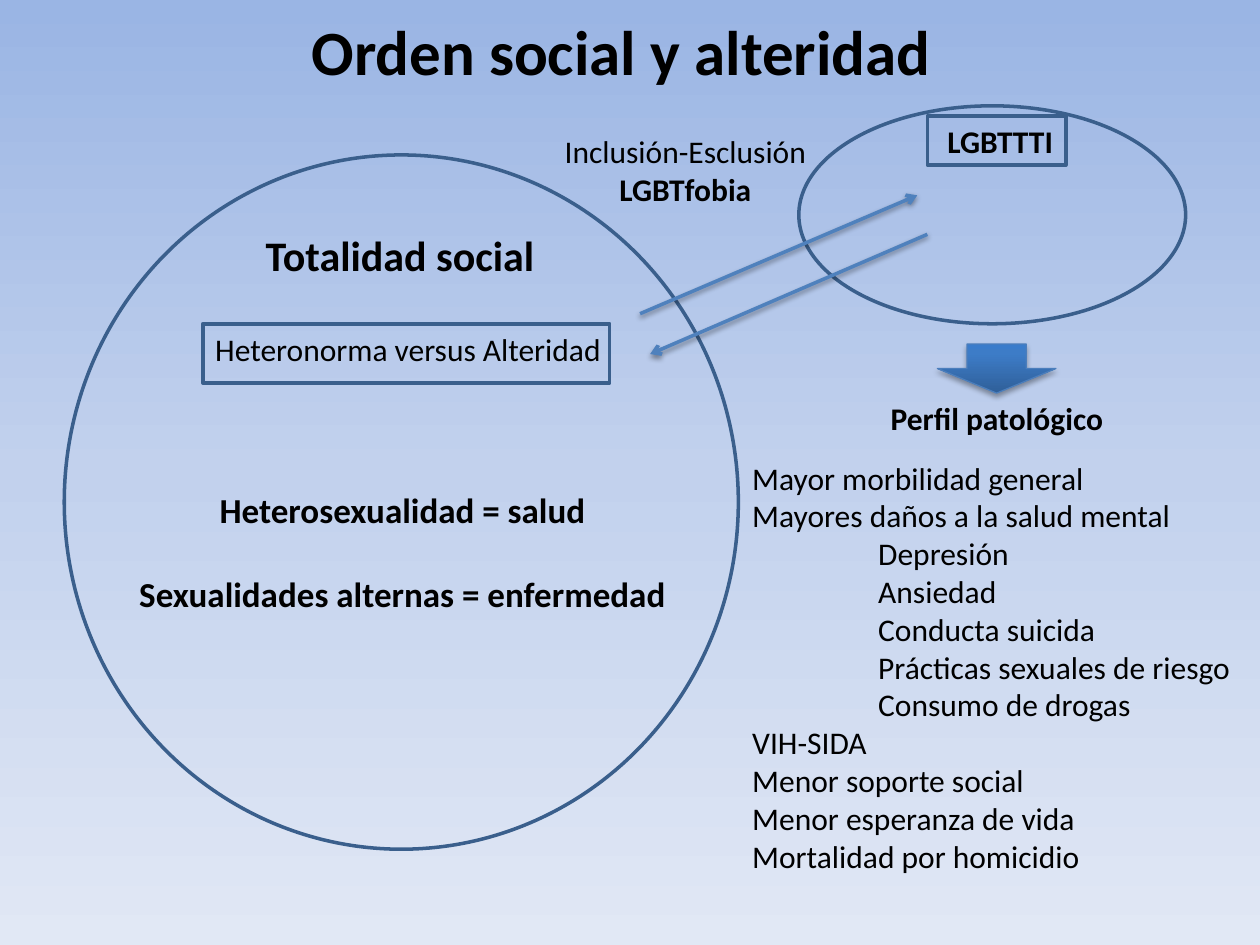
from lxml.etree import SubElement
from pptx import Presentation
from pptx.dml.color import RGBColor
from pptx.enum.shapes import MSO_CONNECTOR, MSO_SHAPE
from pptx.enum.text import MSO_ANCHOR, MSO_AUTO_SIZE, PP_ALIGN
from pptx.oxml.ns import qn
from pptx.util import Inches, Pt

COLUMNS, ROWS = 100, 75
WIDTH, HEIGHT = Inches(10), Inches(7.5)
FONT = "Calibri"
COLORS = {
    "text": "000000",
    "outline": "3A5F8C",
    "arrow": "4F81BD",
    "block_line": "4B7EBC",
    "shadow": "000000",
}
BACKGROUND_STOPS = [(0, "9AB5E4"), (50, "C2D1ED"), (100, "E1E8F5")]
BLOCK_STOPS = [(0, "2F5F99"), (80, "3D7CC7"), (100, "3A7CCB")]
PROFILE = [
    ("Mayor morbilidad general", 0),
    ("Mayores daños a la salud mental", 0),
    ("Depresión", 1),
    ("Ansiedad", 1),
    ("Conducta suicida", 1),
    ("Prácticas sexuales de riesgo", 1),
    ("Consumo de drogas", 1),
    ("VIH-SIDA", 0),
    ("Menor soporte social", 0),
    ("Menor esperanza de vida", 0),
    ("Mortalidad por homicidio", 0),
]


def across(columns):
    return round(WIDTH * columns / COLUMNS)


def down(rows):
    return round(HEIGHT * rows / ROWS)


def cells(left, top, width, height):
    return across(left), down(top), across(width), down(height)


def color(name):
    return RGBColor.from_string(COLORS[name])


def set_gradient(fill, element, stops, angle):
    fill.gradient()
    fill.gradient_angle = angle
    stop_list = element.find(".//" + qn("a:gsLst"))
    for stop in list(stop_list):
        stop_list.remove(stop)
    for position, value in stops:
        stop = SubElement(stop_list, qn("a:gs"), pos=str(position * 1000))
        SubElement(stop, qn("a:srgbClr"), val=value)


def add_shadow(shape, distance, opacity):
    properties = shape._element.spPr
    effects = properties.find(qn("a:effectLst"))
    if effects is None:
        effects = SubElement(properties, qn("a:effectLst"))
    shadow = SubElement(effects, qn("a:outerShdw"), blurRad=str(Pt(3.1)),
                        dist=str(Pt(distance)), dir="5400000", rotWithShape="0")
    shade = SubElement(shadow, qn("a:srgbClr"), val=COLORS["shadow"])
    SubElement(shade, qn("a:alpha"), val=str(opacity * 1000))


def format_paragraph(paragraph, text, size, bold, align):
    paragraph.text = text
    paragraph.alignment = align
    paragraph.font.name = FONT
    paragraph.font.size = Pt(size)
    paragraph.font.bold = bold
    paragraph.font.color.rgb = color("text")


def place(shape, box):
    shape.left, shape.top, shape.width, shape.height = cells(*box)
    frame = shape.text_frame
    frame.auto_size = MSO_AUTO_SIZE.NONE
    frame.vertical_anchor = MSO_ANCHOR.TOP
    frame.word_wrap = True
    return frame


def fill_title(slide, text, box):
    frame = place(slide.shapes.title, box)
    format_paragraph(frame.paragraphs[0], text, 36, True, PP_ALIGN.CENTER)


def fill_list(slide, items, box):
    frame = place(slide.placeholders[1], box)
    for index, (text, level) in enumerate(items):
        paragraph = frame.paragraphs[0] if index == 0 else frame.add_paragraph()
        format_paragraph(paragraph, text, 18, False, PP_ALIGN.LEFT)
        paragraph.level = level
        paragraph.space_before = Pt(0)
        properties = paragraph._p.get_or_add_pPr()
        properties.set("marL", str(across(10 * level)))
        properties.set("indent", "0")
        SubElement(properties, qn("a:buNone")) if properties.find(qn("a:defRPr")) is None \
            else properties.find(qn("a:defRPr")).addprevious(
                SubElement(properties, qn("a:buNone")))


def add_label(slide, lines, box, size=18, align=PP_ALIGN.LEFT, gap=0):
    frame = slide.shapes.add_textbox(*cells(*box)).text_frame
    frame.word_wrap = False
    for index, (text, bold) in enumerate(lines):
        paragraph = frame.paragraphs[0] if index == 0 else frame.add_paragraph()
        format_paragraph(paragraph, text, size, bold, align)
        if index:
            paragraph.space_before = Pt(gap)


def add_outline(slide, kind, box):
    shape = slide.shapes.add_shape(kind, *cells(*box))
    shape.shadow.inherit = False
    shape.fill.background()
    shape.line.color.rgb = color("outline")
    shape.line.width = Pt(2)


def add_arrow(slide, start, end):
    connector = slide.shapes.add_connector(
        MSO_CONNECTOR.STRAIGHT, across(start[0]), down(start[1]),
        across(end[0]), down(end[1]))
    connector.line.color.rgb = color("arrow")
    connector.line.width = Pt(2)
    SubElement(connector.line._get_or_add_ln(), qn("a:tailEnd"), type="arrow")
    add_shadow(connector, 1.6, 38)


def add_block_arrow(slide, box):
    shape = slide.shapes.add_shape(MSO_SHAPE.DOWN_ARROW, *cells(*box))
    shape.shadow.inherit = False
    set_gradient(shape.fill, shape._element, BLOCK_STOPS, 90)
    shape.line.color.rgb = color("block_line")
    shape.line.width = Pt(0.75)
    add_shadow(shape, 1.8, 35)


def main():
    presentation = Presentation()
    presentation.slide_width, presentation.slide_height = WIDTH, HEIGHT
    slide = presentation.slides.add_slide(presentation.slide_layouts[1])
    set_gradient(slide.background.fill, slide._element, BACKGROUND_STOPS, 270)

    fill_title(slide, "Orden social y alteridad", (23.4, 0.5, 51.8, 7.1))
    fill_list(slide, PROFILE, (58.7, 35.9, 40.3, 34.3))

    add_outline(slide, MSO_SHAPE.OVAL, (5.1, 12.3, 53.5, 55.1))
    add_label(slide, [("Totalidad social", True)], (20.1, 17.7, 23.9, 5), 24)
    add_outline(slide, MSO_SHAPE.RECTANGLE, (16.1, 25.7, 32.3, 4.7))
    add_label(slide, [("Heteronorma versus Alteridad", False)], (16.1, 25.7, 33.1, 4))
    add_label(slide, [("Heterosexualidad = salud", True),
                      ("Sexualidades alternas = enfermedad", True)],
              (9.8, 38.3, 44.3, 14.5), 20, PP_ALIGN.CENTER, 24)

    add_outline(slide, MSO_SHAPE.OVAL, (63.4, 8.4, 30.7, 17.3))
    add_outline(slide, MSO_SHAPE.RECTANGLE, (73.6, 9.2, 11, 3.9))
    add_label(slide, [("LGBTTTI", True)], (74.2, 9.2, 10.5, 4))
    add_label(slide, [("Inclusión-Esclusión", False), ("LGBTfobia", True)],
              (43.7, 10, 21.4, 7.1), align=PP_ALIGN.CENTER)
    add_arrow(slide, (50.8, 24.9), (72.8, 15.5))
    add_arrow(slide, (73.6, 18.6), (51.6, 28.1))

    add_block_arrow(slide, (74.4, 27.3, 9.4, 3.9))
    add_label(slide, [("Perfil patológico", True)], (69.7, 31.2, 19, 4))
    presentation.save("out.pptx")


if __name__ == "__main__":
    main()
